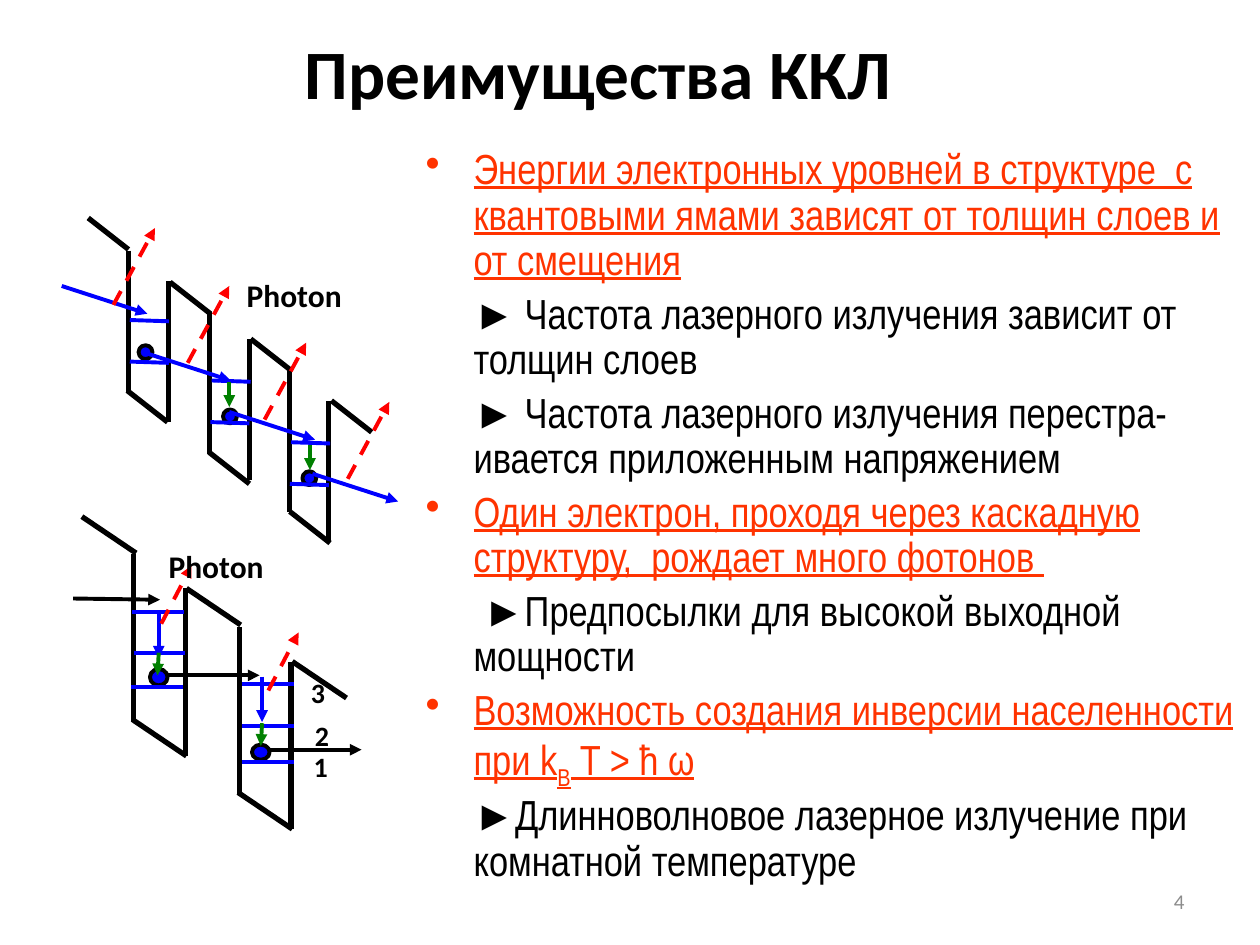
from lxml.etree import SubElement
from pptx import Presentation
from pptx.dml.color import RGBColor
from pptx.enum.dml import MSO_LINE
from pptx.enum.shapes import MSO_CONNECTOR, MSO_SHAPE
from pptx.enum.text import MSO_ANCHOR, PP_ALIGN
from pptx.oxml.ns import qn
from pptx.util import Inches, Pt

BLACK, BLUE, RED, GREEN = "000000", "0000FF", "FF0000", "008000"
ORANGE, GRAY = "FF3300", "8C8C8C"

deck = Presentation()
deck.slide_width, deck.slide_height = Inches(10), Inches(7.5)
page = deck.slides.add_slide(deck.slide_layouts[6])
color = RGBColor.from_string
cell = deck.slide_width / 10  # square grid: 10 columns by 7.5 rows


def grid(*values):
    return [round(value * cell) for value in values]


def add_text(place, text, size, tint=BLACK, bold=True, align=PP_ALIGN.LEFT,
             anchor=MSO_ANCHOR.TOP):
    frame = page.shapes.add_textbox(*grid(*place)).text_frame
    frame.word_wrap, frame.vertical_anchor = True, anchor
    para = frame.paragraphs[0]
    para.text, para.alignment = text, align
    para.font.name, para.font.size, para.font.bold = "Calibri", Pt(size), bold
    para.font.color.rgb = color(tint)


# Title and page number
add_text((0.37, 0.28, 8.75, 0.58), "Преимущества ККЛ", 39.6,
         align=PP_ALIGN.CENTER, anchor=MSO_ANCHOR.MIDDLE)
add_text((7.17, 6.95, 2.33, 0.4), "4", 12, GRAY, False,
         PP_ALIGN.RIGHT, MSO_ANCHOR.MIDDLE)

# Advantages: bulleted headings (True), each with its consequences;
# every piece of a paragraph is text and baseline shift
advantages = [
    (True, [("Энергии электронных уровней в структуре  с квантовыми ямами "
             "зависят от толщин слоев и от смещения", 0)]),
    (False, [("\t► Частота лазерного излучения зависит от толщин слоев", 0)]),
    (False, [("\t► Частота лазерного излучения перестра-ивается "
              "приложенным напряжением", 0)]),
    (True, [("Один электрон, проходя через каскадную структуру,  "
             "рождает много фотонов ", 0)]),
    (False, [("\t ►Предпосылки для высокой выходной мощности", 0)]),
    (True, [("Возможность создания инверсии населенности при k", 0),
            ("B", -25), (" T > ħ ω", 0)]),
    (False, [("\t►Длинноволновое лазерное излучение при "
              "комнатной температуре", 0)]),
]
frame = page.shapes.add_textbox(*grid(3.28, 1.13, 6.72, 6.08)).text_frame
frame.word_wrap = True
for index, (heading, pieces) in enumerate(advantages):
    para = frame.add_paragraph() if index else frame.paragraphs[0]
    para.line_spacing, para.space_before = 0.9, Pt(4.8)
    para.font.name, para.font.size = "Arial Narrow", Pt(24)
    para.font.underline = heading
    para.font.color.rgb = color(ORANGE if heading else BLACK)
    props = para._p.get_or_add_pPr()
    indent = grid(0.38)[0]
    props.set("marL", str(indent))
    props.set("indent", str(-indent))
    bullet = SubElement(props, qn("a:buChar" if heading else "a:buNone"))
    if heading:
        bullet.set("char", "•")
    props.append(props.find(qn("a:defRPr")))  # must follow the bullet
    for text, shift in pieces:
        span = para.add_run()
        span.text = text
        span.font.name, span.font.size = "Arial Narrow", Pt(24)
        span.font.underline = heading
        span.font.color.rgb = color(ORANGE if heading else BLACK)
        if shift:
            span.font._element.set("baseline", str(shift * 1000))

# Electrons: left, top, width, height
for place in [(1.1, 2.74, 0.11, 0.11), (1.77, 3.25, 0.11, 0.11),
              (2.4, 3.74, 0.11, 0.11), (1.19, 5.31, 0.14, 0.13),
              (2, 5.91, 0.14, 0.12)]:
    electron = page.shapes.add_shape(MSO_SHAPE.OVAL, *grid(*place))
    electron.shadow.inherit = False
    electron.fill.solid()
    electron.fill.fore_color.rgb = color(BLUE)
    electron.line.color.rgb = color(BLACK)
    electron.line.width = Pt(2.25)

# Families of parallel lines: colour, width, arrow, run and drop, starts
families = [
    # upper cascade: well walls, barrier tops, well floors, levels
    (BLACK, 3, False, (0, 1.12), [(1.02, 1.99), (1.34, 2.23), (1.66, 2.48),
                                  (1.98, 2.69), (2.3, 2.94), (2.61, 3.18)]),
    (BLACK, 3, False, (0.32, 0.25), [(0.7, 1.73), (1.35, 2.24), (1.99, 2.69),
                                     (2.63, 3.18), (1.01, 3.1), (1.66, 3.59),
                                     (2.3, 4.06)]),
    (BLUE, 2.25, False, (0.31, 0.01), [(1.03, 2.54), (1.03, 2.87),
                                       (1.68, 3.02), (1.67, 3.35),
                                       (2.31, 3.51), (2.3, 3.84)]),
    # upper cascade: tunnelling, relaxation, photons
    (BLUE, 2.25, True, (0.68, 0.22), [(0.49, 2.27), (1.15, 2.8),
                                      (1.82, 3.27), (2.48, 3.76)]),
    (GREEN, 2.25, True, (0, 0.2), [(1.82, 3.03), (2.46, 3.53)]),
    (RED, 2.25, True, (0.33, -0.61), [(0.9, 2.42), (1.49, 2.88),
                                      (2.1, 3.33), (2.76, 3.8)]),
    # lower cascade: well walls, barrier tops and floors, levels
    (BLACK, 3, False, (0, 1.33), [(1.06, 4.4), (1.47, 4.67),
                                  (1.9, 4.98), (2.31, 5.25)]),
    (BLACK, 3, False, (0.43, 0.29), [(0.65, 4.1), (1.48, 4.67), (2.32, 5.25),
                                     (1.05, 5.71), (1.89, 6.29)]),
    (BLUE, 2.25, False, (0.41, 0), [(1.05, 4.86), (1.06, 5.18), (1.04, 5.45),
                                    (1.92, 5.43), (1.92, 5.76), (1.92, 6.05)]),
    # lower cascade: tunnelling, transitions, relaxation, photons
    (BLACK, 2.25, True, (0.69, 0.01), [(0.58, 4.75)]),
    (BLACK, 2.25, True, (0.74, 0), [(1.32, 5.36), (2.13, 5.95)]),
    (BLUE, 2.25, True, (0, 0.36), [(1.26, 4.86), (2.08, 5.37)]),
    (GREEN, 2.25, True, (-0.01, 0.18), [(1.26, 5.18), (2.08, 5.74)]),
    (RED, 2.25, True, (0.24, -0.46), [(1.28, 4.95), (2.13, 5.48)]),
]
for tint, width, arrow, (run, drop), starts in families:
    for x, y in starts:
        line = page.shapes.add_connector(
            MSO_CONNECTOR.STRAIGHT, *grid(x, y, x + run, y + drop))
        line.line.color.rgb = color(tint)
        line.line.width = Pt(width)
        if tint == RED:
            line.line.dash_style = MSO_LINE.DASH
        if arrow:
            SubElement(line.line._get_or_add_ln(), qn("a:tailEnd"), type="triangle")
        SubElement(line._element.spPr, qn("a:effectLst"))

# Diagram labels
for left, top in [(1.86, 2.14), (1.24, 4.29)]:
    add_text((left, top, 1.03, 0.4), "Photon", 18)
for level, left, top in [("1", 2.39, 5.9), ("2", 2.4, 5.65), ("3", 2.37, 5.31)]:
    add_text((left, top, 0.26, 0.37), level, 16)

deck.save("out.pptx")
